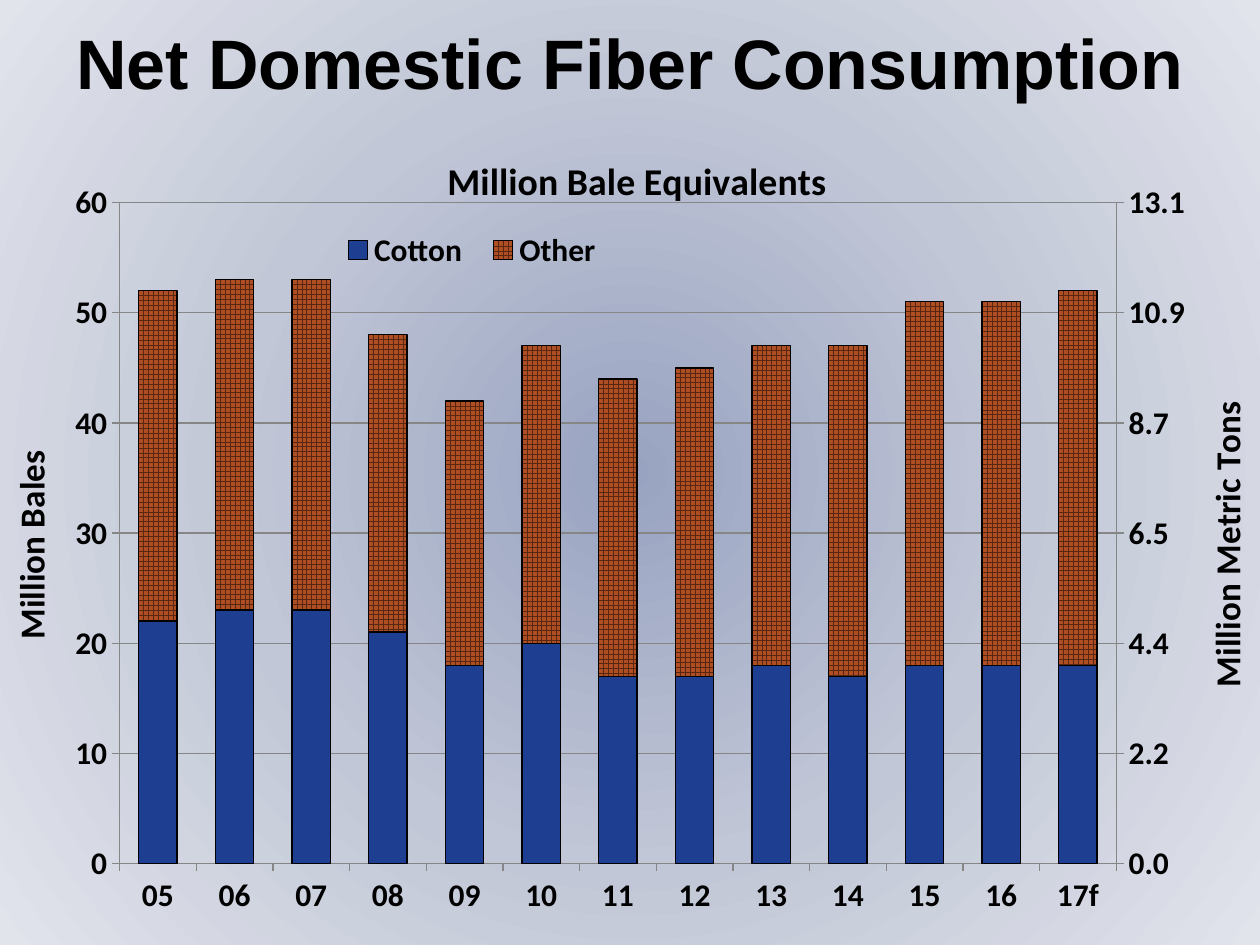
from copy import deepcopy

from pptx import Presentation
from pptx.chart.axis import CategoryAxis, ValueAxis
from pptx.chart.data import CategoryChartData
from pptx.dml.color import RGBColor
from pptx.enum.chart import XL_CHART_TYPE as ChartType, XL_LEGEND_POSITION as LegendSide
from pptx.enum.chart import XL_TICK_LABEL_POSITION as LabelSide, XL_TICK_MARK as Tick
from pptx.enum.dml import MSO_PATTERN_TYPE as Pattern
from pptx.enum.text import MSO_ANCHOR as Anchor, PP_ALIGN as Align
from pptx.oxml import parse_xml
from pptx.oxml.ns import nsdecls, qn
from pptx.util import Emu, Pt

YEARS = ["05", "06", "07", "08", "09", "10", "11", "12", "13", "14", "15", "16", "17f"]
CONSUMPTION = {
    "Cotton": [22, 23, 23, 21, 18, 20, 17, 17, 18, 17, 18, 18, 18],
    "Other": [30, 30, 30, 27, 24, 27, 27, 28, 29, 30, 33, 33, 34],
    "Series 3": [4.9, 4.9, 4.9, 4.6, 4, 4.4, 3.8, 3.7, 3.8, 3.8, 3.9, 3.8, 3.9],
    "Series 4": [6.5, 6.5, 6.5, 5.8, 5.3, 6, 5.8, 6, 6.3, 6.6, 7.2, 7.3, 7.4],
}
BALES_PER_TON = 4.59
GRID = "868686"


def px(count):
    return Emu(round(count * 914400 / 126))


def color(code):
    return RGBColor.from_string(code)


def style(target, **values):
    for key, value in values.items():
        setattr(target, key, value)


def style_font(font, size, name):
    style(font, size=Pt(size), name=name, bold=True)
    font.color.rgb = color("000000")


def style_line(line, code):
    line.color.rgb = color(code)
    line.width = Pt(0.75)


def place(part, x, y, w=None, h=None, inner=False):
    for old in part.findall(qn("c:layout")):
        part.remove(old)
    target = '<c:layoutTarget val="inner"/>' if inner else ""
    modes = '<c:xMode val="edge"/><c:yMode val="edge"/>'
    sizes = "".join(f'<c:{key} val="{value}"/>' for key, value in
                    {"x": x, "y": y, "w": w, "h": h}.items() if value is not None)
    layout = parse_xml(f'<c:layout {nsdecls("c")}><c:manualLayout>{target}{modes}{sizes}'
                       '</c:manualLayout></c:layout>')
    part.xpath("c:overlay|c:barChart")[0].addprevious(layout)


def paint_background(slide):
    slide.background.fill.solid()
    properties = slide._element.find(".//" + qn("p:bgPr"))
    stops = "".join(f'<a:gs pos="{pos}"><a:srgbClr val="{code}"/></a:gs>' for pos, code in
                    [(0, "98A3C1"), (50000, "C2C7D7"), (100000, "E1E4EB")])
    properties.replace(properties[0], parse_xml(
        f'<a:gradFill {nsdecls("a")} rotWithShape="1"><a:gsLst>{stops}</a:gsLst>'
        '<a:path path="circle"><a:fillToRect l="50000" t="50000" r="50000" b="50000"/>'
        '</a:path></a:gradFill>'))


def add_heading(slide, left, top, width, height):
    frame = slide.shapes.add_textbox(px(left), px(top), px(width), px(height)).text_frame
    style(frame, word_wrap=True, vertical_anchor=Anchor.MIDDLE)
    heading = frame.paragraphs[0]
    heading.alignment = Align.CENTER
    run = heading.add_run()
    run.text = "Net Domestic Fiber Consumption"
    style_font(run.font, 40, "Arial")


def write_title(title, text, size, x, y):
    frame = title.text_frame
    frame.text = text
    style_font(frame.paragraphs[0].runs[0].font, size, "Calibri")
    place(title._element, x, y)
    return frame


def format_value_axis(axis, title, x, y, number_format, top, gridlines):
    style(axis, minimum_scale=0, maximum_scale=top, major_unit=top / 6,
          has_major_gridlines=gridlines, major_tick_mark=Tick.OUTSIDE,
          minor_tick_mark=Tick.NONE)
    style(axis.tick_labels, number_format=number_format, number_format_is_linked=False)
    style_line(axis.format.line, GRID)
    if gridlines:
        style_line(axis.major_gridlines.format.line, GRID)
    body = write_title(axis.axis_title, title, 20, x, y)._txBody.find(qn("a:bodyPr"))
    body.set("rot", "-5400000")
    body.set("vert", "horz")


def add_right_axis(chart):
    bales = chart._chartSpace.find(".//" + qn("c:barChart"))
    tons = deepcopy(bales)
    for group, hidden in ((bales, slice(2, 4)), (tons, slice(0, 2))):
        for series in group.findall(qn("c:ser"))[hidden]:
            group.remove(series)
    bales.addnext(tons)

    left = chart.value_axis._element
    years, right = deepcopy(chart.category_axis._element), deepcopy(left)
    ids = {"years": "5001", "tons": "5002"}
    for reference, number in zip(tons.findall(qn("c:axId")), ids.values()):
        reference.set("val", number)
    for axis, own, other in ((years, "years", "tons"), (right, "tons", "years")):
        axis.find(qn("c:axId")).set("val", ids[own])
        axis.find(qn("c:crossAx")).set("val", ids[other])
    right.find(qn("c:axPos")).set("val", "r")
    right.find(qn("c:crosses")).set("val", "max")
    left.addnext(right)
    right.addnext(years)
    CategoryAxis(years).visible = False
    return ValueAxis(right)


def format_series(chart):
    cotton, other, *hidden = chart.plots[0].series
    cotton.format.fill.solid()
    cotton.format.fill.fore_color.rgb = color("1E3E92")
    hatch = other.format.fill
    hatch.patterned()
    hatch.pattern = Pattern.LARGE_GRID
    hatch.fore_color.rgb = color("572711")
    hatch.back_color.rgb = color("AE4E22")
    for series in (cotton, other):
        style_line(series.format.line, "000000")
    for series in hidden:
        series.format.fill.background()
        series.format.line.fill.background()


def add_legend(chart):
    chart.has_legend = True
    style(chart.legend, position=LegendSide.TOP, include_in_layout=True)
    legend = chart.legend._element
    place(legend, 0.26, 0.13, 0.23, 0.05)
    for index in (2, 3):
        legend.find(qn("c:layout")).addprevious(parse_xml(
            f'<c:legendEntry {nsdecls("c")}><c:idx val="{index}"/><c:delete val="1"/>'
            '</c:legendEntry>'))


def add_consumption_chart(slide, left, top, width, height):
    data = CategoryChartData()
    data.categories = YEARS
    for name, values in CONSUMPTION.items():
        data.add_series(name, values)
    chart = slide.shapes.add_chart(ChartType.COLUMN_STACKED, px(left), px(top),
                                   px(width), px(height), data).chart
    style_font(chart.font, 18, "Calibri")
    write_title(chart.chart_title, "Million Bale Equivalents", 21.6, 0.35, 0.03)
    style(chart.plots[0], gap_width=100, overlap=100, vary_by_categories=False)
    format_series(chart)
    style(chart.category_axis, major_tick_mark=Tick.OUTSIDE, minor_tick_mark=Tick.NONE,
          tick_label_position=LabelSide.LOW)
    style_line(chart.category_axis.format.line, GRID)
    format_value_axis(chart.value_axis, "Million Bales", 0, 0.39, "0", 60, True)
    format_value_axis(add_right_axis(chart), "Million Metric Tons", 0.95, 0.33, "#,##0.0",
                      60 / BALES_PER_TON, False)
    add_legend(chart)
    place(chart._chartSpace.find(".//" + qn("c:plotArea")), 0.095, 0.097, 0.792, 0.804, True)


def main():
    deck = Presentation()
    style(deck, slide_width=px(1260), slide_height=px(945))
    slide = deck.slides.add_slide(deck.slide_layouts[6])
    paint_background(slide)
    add_heading(slide, 0, 0, 1260, 123)
    add_consumption_chart(slide, 0, 123, 1260, 822)
    deck.save("out.pptx")


if __name__ == "__main__":
    main()
